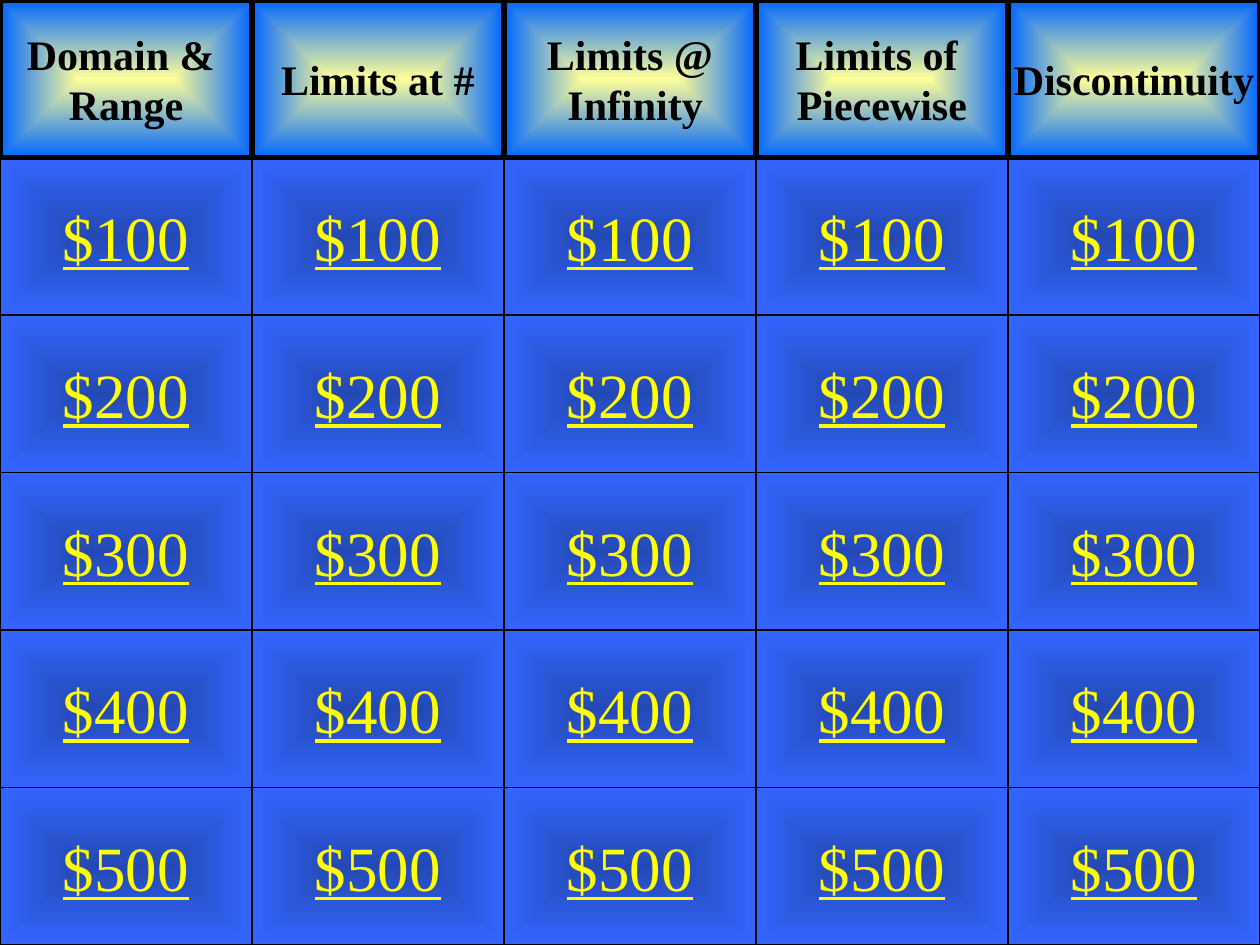
from dataclasses import dataclass

from pptx import Presentation
from pptx.dml.color import RGBColor
from pptx.enum.shapes import MSO_SHAPE
from pptx.enum.text import MSO_ANCHOR, PP_ALIGN
from pptx.oxml import parse_xml
from pptx.oxml.ns import nsdecls, qn
from pptx.util import Pt


@dataclass(frozen=True)
class Theme:
    font: str = "Times New Roman"
    black: str = "000000"
    amount: str = "FFFF00"
    # Gradients run from the centre outwards
    page: tuple = ("3366FF", "2449B6")
    button: tuple = ("2449B6", "3366FF")
    header: tuple = ("FFFF99", "0066FF")
    header_size: int = 24
    amount_size: int = 36


THEME = Theme()
SLIDE_W, SLIDE_H = 720, 540

CATEGORIES = [
    ["Domain & ", "Range"],
    ["Limits at #"],
    ["Limits @", " Infinity"],
    ["Limits of ", "Piecewise"],
    ["Discontinuity"],
]
AMOUNTS = ["$100", "$200", "$300", "$400", "$500"]
CELL_W = SLIDE_W / len(CATEGORIES)
CELL_H = SLIDE_H / (len(AMOUNTS) + 1)


def set_gradient(fill, element, colors, path):
    """Fill with a two-colour gradient spreading from the centre."""
    fill.gradient()
    stops = "".join(
        f'<a:gs pos="{pos}"><a:srgbClr val="{color}"/></a:gs>'
        for pos, color in zip((0, 100000), colors)
    )
    grad = parse_xml(
        f'<a:gradFill {nsdecls("a")} rotWithShape="1"><a:gsLst>{stops}</a:gsLst>'
        f'<a:path path="{path}">'
        '<a:fillToRect l="50000" t="50000" r="50000" b="50000"/>'
        "</a:path></a:gradFill>"
    )
    old = element.find(".//" + qn("a:gradFill"))
    old.getparent().replace(old, grad)


def set_text(sp, lines, size, color, bold=False, underline=False):
    """Write centred lines, one paragraph each."""
    tf = sp.text_frame
    tf.word_wrap = False
    tf.vertical_anchor = MSO_ANCHOR.MIDDLE
    for i, line in enumerate(lines):
        p = tf.add_paragraph() if i else tf.paragraphs[0]
        p.alignment = PP_ALIGN.CENTER
        r = p.add_run()
        r.text = line
        r.font.name = THEME.font
        r.font.size = Pt(size)
        r.font.color.rgb = RGBColor.from_string(color)
        r.font.bold = bold
        r.font.underline = underline


def add_cell(s, kind, col, row, colors, path, line_width):
    """Add one shape at a position on the board grid."""
    sp = s.shapes.add_shape(
        kind, Pt(col * CELL_W), Pt(row * CELL_H), Pt(CELL_W), Pt(CELL_H)
    )
    sp.shadow.inherit = False
    set_gradient(sp.fill, sp.element.spPr, colors, path)
    sp.line.color.rgb = RGBColor.from_string(THEME.black)
    sp.line.width = Pt(line_width)
    return sp


def add_amount(s, col, row, amount):
    sp = add_cell(s, MSO_SHAPE.ACTION_BUTTON_CUSTOM, col, row,
                  THEME.button, "rect", 0.75)
    set_text(sp, [amount], size=THEME.amount_size, color=THEME.amount,
             underline=True)


def add_header(s, col, lines):
    sp = add_cell(s, MSO_SHAPE.RECTANGLE, col, 0, THEME.header, "shape", 3)
    set_text(sp, lines, size=THEME.header_size, color=THEME.black, bold=True)


def main():
    prs = Presentation()
    prs.slide_width, prs.slide_height = Pt(SLIDE_W), Pt(SLIDE_H)
    s = prs.slides.add_slide(prs.slide_layouts[6])
    set_gradient(s.background.fill, s.element, THEME.page, "shape")

    # Amount buttons, column by column
    for col in range(len(CATEGORIES)):
        for row, amount in enumerate(AMOUNTS, start=1):
            add_amount(s, col, row, amount)

    # Category headers on top
    for col, lines in enumerate(CATEGORIES):
        add_header(s, col, lines)

    prs.save("out.pptx")


if __name__ == "__main__":
    main()
